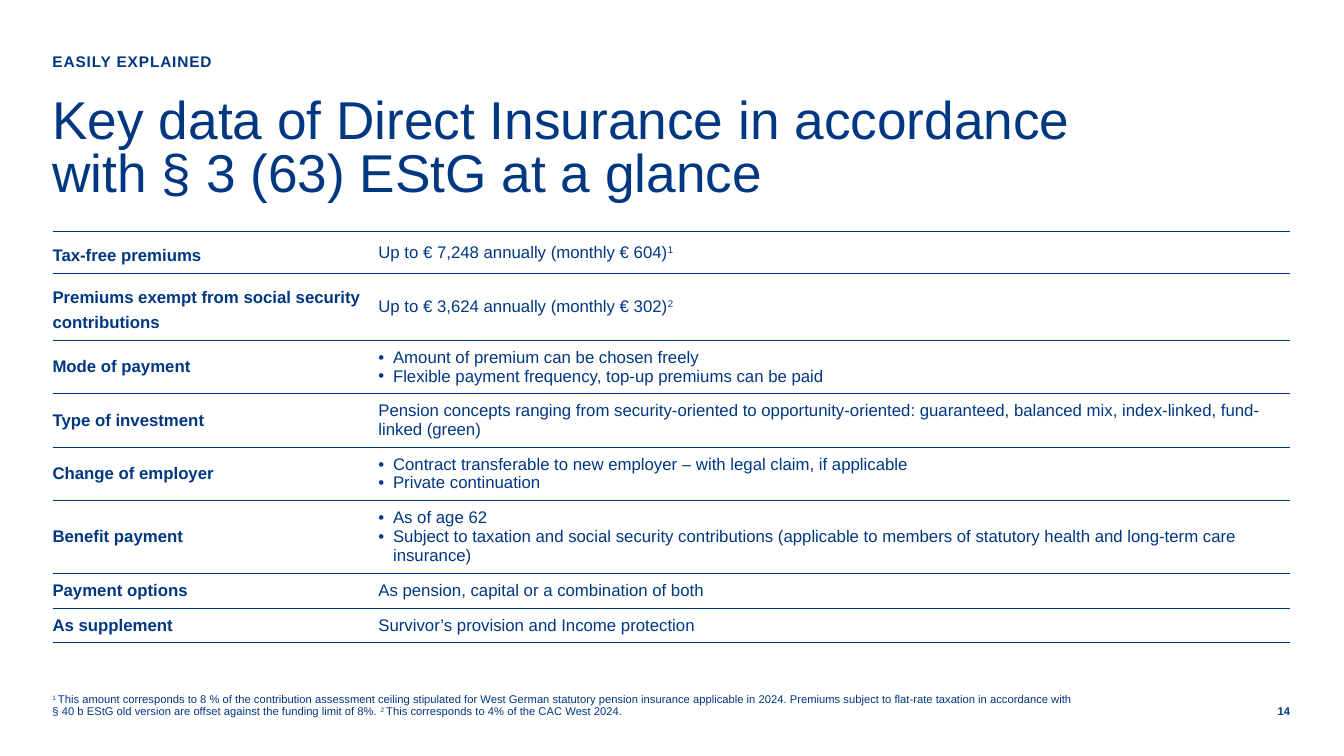
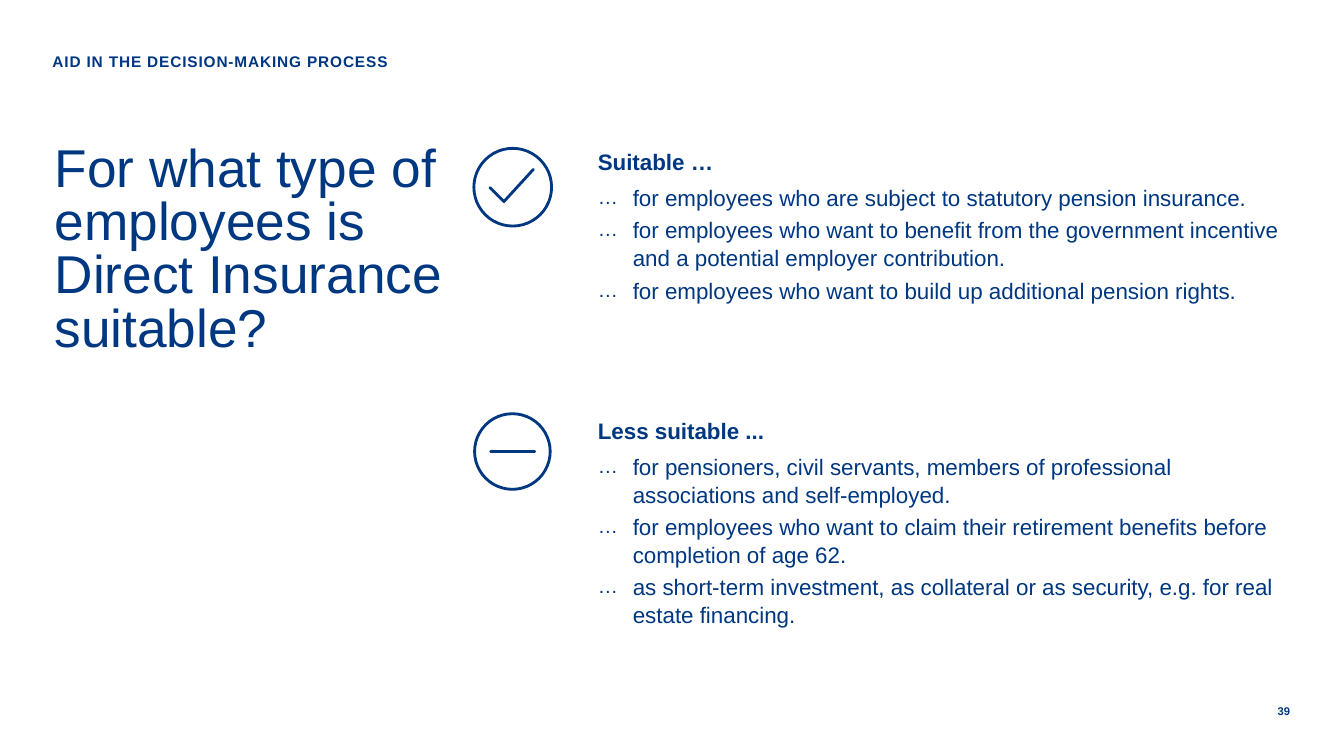
import lxml.etree
import pptx
import pptx.dml.color
import pptx.enum.shapes
import pptx.enum.text
import pptx.oxml.ns
import pptx.util

Pt = pptx.util.Pt
qn = pptx.oxml.ns.qn
ANCHOR = pptx.enum.text.MSO_ANCHOR
ALIGN = pptx.enum.text.PP_ALIGN

BLUE = pptx.dml.color.RGBColor(0x00, 0x37, 0x81)
FONT = "Arial"
LEFT, RIGHT, TEXT_WIDTH = 37.5, 921.5, 734.5


def write(tf, text, size=12, bold=False, align=ALIGN.LEFT, line=None, before=0,
          bullet=None, bullet_size=100, hang=0, tracking=0):
    """Fill a text frame: newlines part paragraphs, ^ signs enclose superscripts."""
    for i, para in enumerate(text.split("\n")):
        p = tf.paragraphs[0] if i == 0 else tf.add_paragraph()
        pPr = p._p.get_or_add_pPr()
        if bullet:
            pPr.set("marL", str(Pt(hang)))
            pPr.set("indent", str(-Pt(hang)))
            for tag, key, value in (("a:buSzPct", "val", str(bullet_size * 1000)),
                                    ("a:buFont", "typeface", FONT),
                                    ("a:buChar", "char", bullet)):
                lxml.etree.SubElement(pPr, qn(tag)).set(key, value)
        p.alignment = align
        p.space_before = Pt(before if i else 0)
        if line:
            p.line_spacing = line
        for j, part in enumerate(para.split("^")):
            if not part:
                continue
            r = p.add_run()
            r.text = part
            r.font.name, r.font.size, r.font.bold = FONT, Pt(size), bold
            r.font.color.rgb = BLUE
            rPr = r._r.get_or_add_rPr()
            if j % 2:
                rPr.set("baseline", "30000")
            if tracking:
                rPr.set("spc", str(tracking))


def place(sp, left, top, width, height, anchor=ANCHOR.TOP):
    """Position a text shape, clear its insets and return its text frame."""
    sp.left, sp.top, sp.width, sp.height = Pt(left), Pt(top), Pt(width), Pt(height)
    tf = sp.text_frame
    tf.word_wrap = True
    tf.auto_size = pptx.enum.text.MSO_AUTO_SIZE.NONE
    tf.vertical_anchor = anchor
    tf.margin_left = tf.margin_top = tf.margin_right = tf.margin_bottom = 0
    return tf


prs = pptx.Presentation()
prs.slide_width, prs.slide_height = Pt(960), Pt(540)

# Shared parts: title, eyebrow and page number
slides = []
for layout, title, title_box, eyebrow, number in (
        (5, "Key data of Direct Insurance in accordance with § 3 (63) EStG at a glance",
         (LEFT, 69, TEXT_WIDTH, 73.5), "EASILY EXPLAINED", "14"),
        (4, "For what type of employees is Direct Insurance suitable?",
         (39, 103.5, 282, 343.5), "AID IN THE DECISION-MAKING PROCESS", "39")):
    s = prs.slides.add_slide(prs.slide_layouts[layout])
    write(place(s.shapes.title, *title_box), title, size=38, line=Pt(38))
    sp = s.shapes.add_textbox(0, 0, 0, 0)
    write(place(sp, LEFT, 37.5, TEXT_WIDTH, 20), eyebrow, size=11, bold=True, tracking=60)
    sp = s.shapes.add_textbox(0, 0, 0, 0)
    write(place(sp, RIGHT - 21, 502, 21, 11.5, ANCHOR.MIDDLE), number, size=8,
          bold=True, align=ALIGN.RIGHT, line=Pt(10))
    slides.append(s)
key_data, suitability = slides

# Key data table: label, details, bulleted, row height
rows = [
    ("Tax-free premiums", "Up to € 7,248 annually (monthly € 604)^1^", False, 30),
    ("Premiums exempt from social security contributions",
     "Up to € 3,624 annually (monthly € 302)^2^", False, 47.5),
    ("Mode of payment",
     "Amount of premium can be chosen freely\n"
     "Flexible payment frequency, top-up premiums can be paid", True, 38),
    ("Type of investment",
     "Pension concepts ranging from security-oriented to opportunity-oriented: "
     "guaranteed, balanced mix, index-linked, fund-linked (green)", False, 38),
    ("Change of employer",
     "Contract transferable to new employer – with legal claim, if applicable\n"
     "Private continuation", True, 38),
    ("Benefit payment",
     "As of age 62\n"
     "Subject to taxation and social security contributions (applicable to members "
     "of statutory health and long-term care insurance)", True, 52),
    ("Payment options", "As pension, capital or a combination of both", False, 24.7),
    ("As supplement", "Survivor’s provision and Income protection", False, 24.7),
]
table = key_data.shapes.add_table(
    len(rows), 2, Pt(LEFT), Pt(165.5), Pt(RIGHT - LEFT),
    Pt(sum(row[3] for row in rows))).table
table.first_row = table.horz_banding = False
table.columns[0].width, table.columns[1].width = Pt(227), Pt(RIGHT - LEFT - 227)
for i, (label, details, bulleted, height) in enumerate(rows):
    table.rows[i].height = Pt(height)
    for j, text in enumerate((label, details)):
        cell = table.cell(i, j)
        cell.vertical_anchor = ANCHOR.MIDDLE
        cell.margin_left = Pt(5.76 if j else 0)
        cell.margin_top = cell.margin_right = cell.margin_bottom = Pt(5.76)
        tcPr = cell._tc.get_or_add_tcPr()
        for side in "LRTB":
            ln = lxml.etree.SubElement(tcPr, qn("a:ln" + side))
            if side in "LR":
                lxml.etree.SubElement(ln, qn("a:noFill"))
                continue
            ln.set("w", str(Pt(1 if i == 0 and side == "T" else 0.5)))
            fill = lxml.etree.SubElement(ln, qn("a:solidFill"))
            lxml.etree.SubElement(fill, qn("a:srgbClr")).set("val", str(BLUE))
        cell.fill.background()
        write(cell.text_frame, text, bold=j == 0,
              line=Pt(18 if i < 2 and j == 0 else 13.3),
              bullet="•" if bulleted and j else None, hang=10.5)

# Footnotes
sp = key_data.shapes.add_textbox(0, 0, 0, 0)
write(place(sp, LEFT, 485.5, TEXT_WIDTH, 27.5, ANCHOR.BOTTOM),
      "^1 ^This amount corresponds to 8 % of the contribution assessment ceiling "
      "stipulated for West German statutory pension insurance applicable in 2024. "
      "Premiums subject to flat-rate taxation in accordance with § 40 b EStG old "
      "version are offset against the funding limit of 8%. "
      "^2 ^This corresponds to 4% of the CAC West 2024.", size=8, line=0.9)

# Suitable and less suitable: headings and lists
groups = [
    ("Suitable …", 105, 131, 132.5,
     "for employees who are subject to statutory pension insurance.\n"
     "for employees who want to benefit from the government incentive and a "
     "potential employer contribution.\n"
     "for employees who want to build up additional pension rights."),
    ("Less suitable ...", 297.5, 323, 152,
     "for pensioners, civil servants, members of professional associations and "
     "self-employed.\n"
     "for employees who want to claim their retirement benefits before completion "
     "of age 62.\n"
     "as short-term investment, as collateral or as security, e.g. for real estate "
     "financing."),
]
for i, (heading, heading_top, list_top, list_height, items) in enumerate(groups):
    head, body = (suitability.placeholders[2 * i + k] for k in (1, 2))
    write(place(head, 427, heading_top, 495, 20), heading, size=16, bold=True, line=1.04)
    write(place(body, 427, list_top, 495, list_height), items, size=16, line=1.04,
          before=3, bullet="…", bullet_size=90, hang=25)

# Icons: tick and dash in circles
shapes = suitability.shapes
icons = [shapes.add_shape(pptx.enum.shapes.MSO_SHAPE.OVAL, Pt(left), Pt(top), Pt(d), Pt(d))
         for left, top, d in ((338.5, 106, 55.5), (339, 295.5, 54))]
tick = shapes.build_freeform(350, 134, scale=Pt(1))
tick.add_line_segments([(360, 144), (381, 121)], close=False)
icons.append(tick.convert_to_shape())
for sp in icons:
    sp.fill.background()
    sp.shadow.inherit = False
dash = shapes.add_connector(pptx.enum.shapes.MSO_CONNECTOR.STRAIGHT,
                            Pt(350.5), Pt(322.5), Pt(382), Pt(322.5))
for sp in icons + [dash]:
    sp.line.color.rgb = BLUE
    sp.line.width = Pt(2)
    ln = sp.line._get_or_add_ln()
    ln.set("cap", "rnd")
    lxml.etree.SubElement(ln, qn("a:round"))
lxml.etree.SubElement(dash._element.spPr, qn("a:effectLst"))

prs.save("out.pptx")
